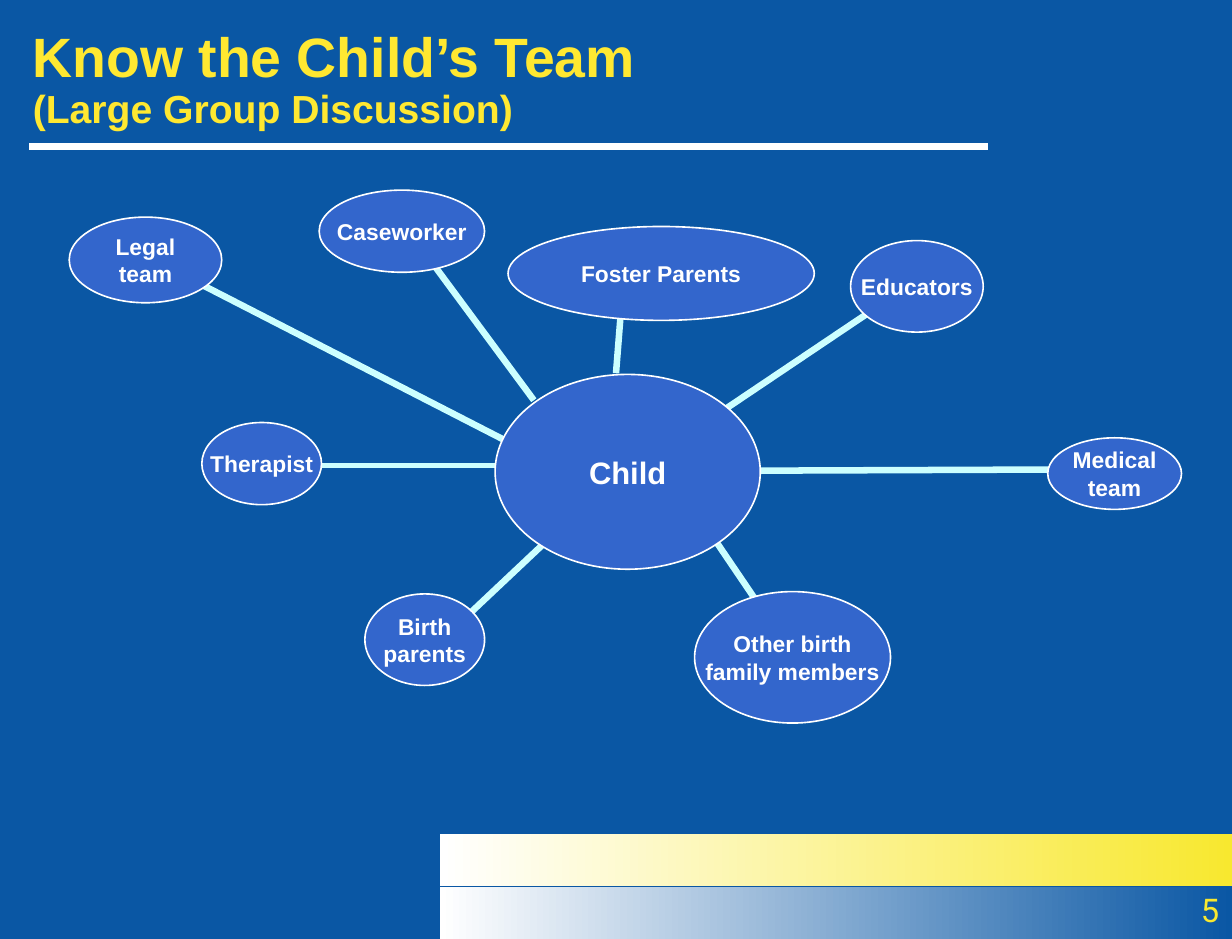
import pptx
import pptx.util
import pptx.dml.color
import pptx.enum.shapes
import pptx.enum.text
import pptx.oxml
import pptx.oxml.ns
from pptx.util import Inches, Pt

ANCHOR = pptx.enum.text.MSO_ANCHOR
ALIGN = pptx.enum.text.PP_ALIGN
SHAPE = pptx.enum.shapes.MSO_SHAPE


def color(value):
    return pptx.dml.color.RGBColor.from_string(value)


def write(para, text, size, value, bold=True, font="Arial"):
    """Add one run per line of text, with line breaks between them."""
    for index, line in enumerate(text.split("\n")):
        if index:
            para.add_line_break()
        span = para.add_run()
        span.text = line
        span.font.name = font
        span.font.size = Pt(size)
        span.font.bold = bold
        span.font.color.rgb = color(value)


deck = pptx.Presentation()
deck.slide_width = Inches(10.5)
deck.slide_height = Inches(8)
page = deck.slides.add_slide(deck.slide_layouts[5])
page.background.fill.solid()
page.background.fill.fore_color.rgb = color("0A57A4")

# Gradient bands at the bottom
for top, end_color in [(7.11, "F8E82F"), (7.56, "0A57A4")]:
    band = page.shapes.add_shape(
        SHAPE.RECTANGLE, Inches(3.75), Inches(top), Inches(6.75), Inches(0.44))
    band.shadow.inherit = False
    band.line.fill.background()
    band.fill.gradient()
    band.fill.gradient_angle = 0
    for stop, position, value in zip(band.fill.gradient_stops, (0, 1), ("FFFFFF", end_color)):
        stop.position = position
        stop.color.rgb = color(value)

# Spokes from the child to the team, then the rule under the title
lines = [
    (6.48, 5.17, 6.08, 4.58, "CCFFFF", 4),
    (9.03, 4, 6.48, 4.01, "CCFFFF", 4),
    (7.38, 2.68, 6.13, 3.52, "CCFFFF", 4),
    (5.29, 2.68, 5.25, 3.18, "CCFFFF", 4),
    (4.55, 3.41, 3.67, 2.22, "CCFFFF", 4),
    (4.34, 3.77, 1.67, 2.4, "CCFFFF", 4),
    (2.72, 3.97, 4.22, 3.97, "CCFFFF", 3),
    (4.69, 4.58, 4, 5.23, "CCFFFF", 4),
    (0.25, 1.25, 8.42, 1.25, "FFFFFF", 4.5),
]
for x1, y1, x2, y2, value, width in lines:
    line = page.shapes.add_connector(
        pptx.enum.shapes.MSO_CONNECTOR.STRAIGHT,
        Inches(x1), Inches(y1), Inches(x2), Inches(y2))
    line.line.color.rgb = color(value)
    line.line.width = Pt(width)
    properties = line._element.spPr
    properties.append(pptx.oxml.parse_xml(
        "<a:effectLst %s/>" % pptx.oxml.ns.nsdecls("a")))

# Title
title = page.shapes.title
title.left, title.top = Inches(0.17), Inches(0.24)
title.width, title.height = Inches(7.75), Inches(0.89)
frame = title.text_frame
frame.auto_size = pptx.enum.text.MSO_AUTO_SIZE.NONE
frame.vertical_anchor = ANCHOR.MIDDLE
frame.margin_left = frame.margin_right = Inches(0.11)
para = frame.paragraphs[0]
para.alignment = ALIGN.LEFT
para.line_spacing = 0.9
write(para, "Know the Child’s Team", 34, "FFE831")
para.add_line_break()
write(para, "(Large Group Discussion)", 24, "FFE831")

# Child and team members
members = [
    ("Child", 4.22, 3.19, 2.26, 1.66, 19),
    ("Foster Parents", 4.33, 1.93, 2.61, 0.8, 14),
    ("Legal\nteam", 0.59, 1.85, 1.3, 0.73, 14),
    ("Medical\nteam", 8.93, 3.73, 1.14, 0.61, 14),
    ("Other birth\nfamily members", 5.92, 5.04, 1.67, 1.12, 14),
    ("Birth\nparents", 3.11, 5.06, 1.02, 0.78, 14),
    ("Educators", 7.25, 2.05, 1.13, 0.78, 14),
    ("Caseworker", 2.72, 1.62, 1.41, 0.7, 14),
    ("Therapist", 1.72, 3.6, 1.02, 0.7, 14),
]
for name, left, top, width, height, size in members:
    member = page.shapes.add_shape(
        SHAPE.OVAL, Inches(left), Inches(top), Inches(width), Inches(height))
    member.shadow.inherit = False
    member.fill.solid()
    member.fill.fore_color.rgb = color("3366CC")
    member.line.color.rgb = color("FFFFFF")
    member.line.width = Pt(1)
    member.text_frame.word_wrap = False
    member.text_frame.vertical_anchor = ANCHOR.MIDDLE
    para = member.text_frame.paragraphs[0]
    para.alignment = ALIGN.CENTER
    write(para, name, size, "FFFFFF")

# Page number
box = page.shapes.add_textbox(Inches(9.75), Inches(7.53), Inches(0.75), Inches(0.42))
box.text_frame.word_wrap = True
box.text_frame.margin_left = box.text_frame.margin_right = Inches(0.11)
para = box.text_frame.paragraphs[0]
para.alignment = ALIGN.RIGHT
write(para, "5", 20, "F8E82F", bold=False, font="Roboto")

deck.save("out.pptx")
